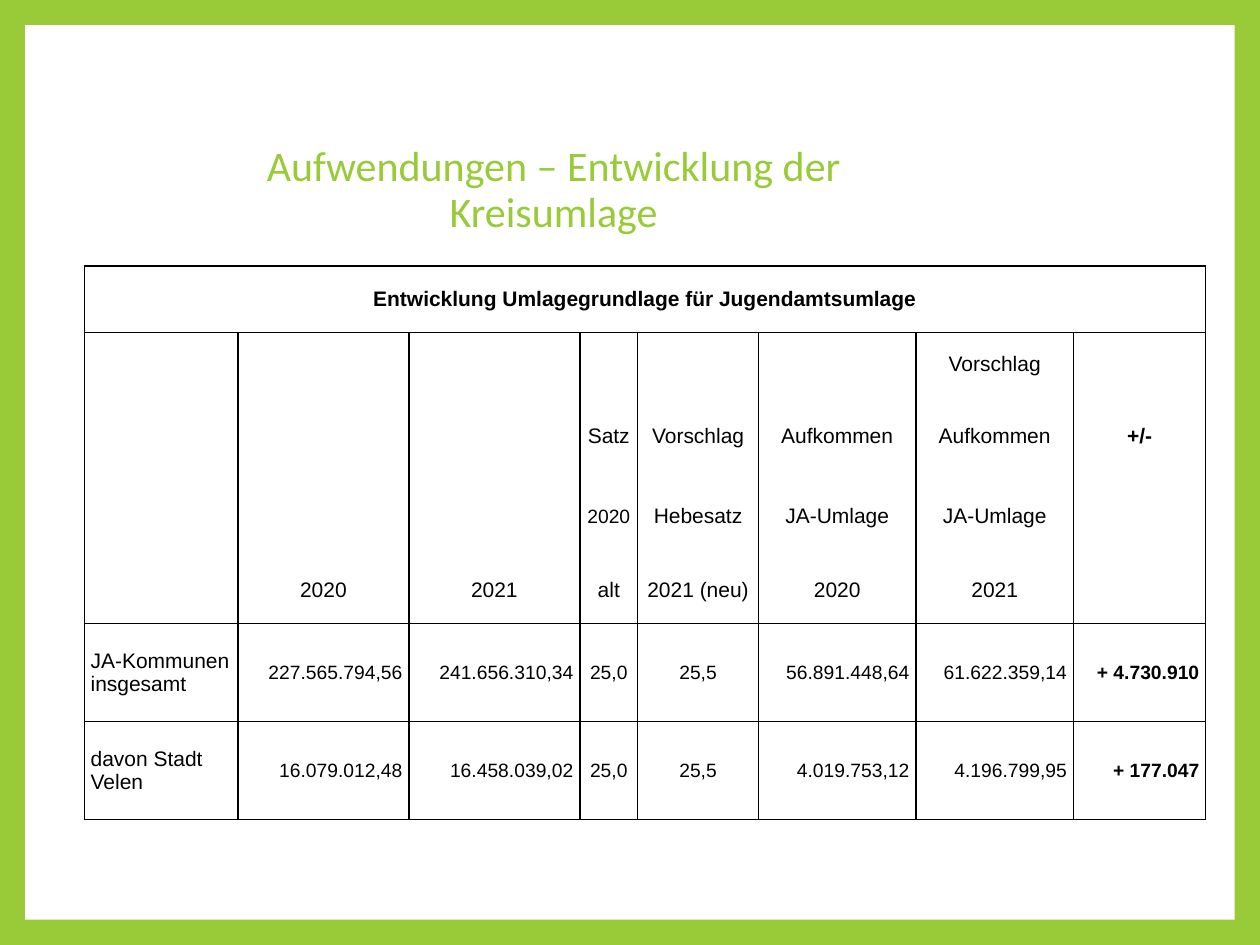
import pptx
import pptx.dml.color
import pptx.enum.shapes
import pptx.enum.text
import pptx.oxml
import pptx.oxml.ns
import pptx.util

Pt = pptx.util.Pt
RGBColor = pptx.dml.color.RGBColor
ALIGN = pptx.enum.text.PP_ALIGN
MIDDLE = pptx.enum.text.MSO_ANCHOR.MIDDLE

GREEN = RGBColor(0x99, 0xCB, 0x38)
WHITE = RGBColor(0xFF, 0xFF, 0xFF)
BLACK = RGBColor(0, 0, 0)

TITLE = "Aufwendungen – Entwicklung der Kreisumlage"
ROWS = [
    ["Entwicklung Umlagegrundlage für Jugendamtsumlage"] + [""] * 7,
    ["", "", "", "", "", "", "Vorschlag", ""],
    ["", "", "", "Satz", "Vorschlag", "Aufkommen", "Aufkommen", "+/-"],
    ["", "", "", "2020", "Hebesatz", "JA-Umlage", "JA-Umlage", ""],
    ["", "2020", "2021", "alt", "2021 (neu)", "2020", "2021", ""],
    ["JA-Kommunen insgesamt", "227.565.794,56", "241.656.310,34", "25,0", "25,5",
     "56.891.448,64", "61.622.359,14", "+ 4.730.910"],
    ["davon Stadt Velen", "16.079.012,48", "16.458.039,02", "25,0", "25,5",
     "4.019.753,12", "4.196.799,95", "+ 177.047"],
]
COLUMN_WIDTHS = [87.8, 97.7, 97.7, 33.1, 69, 90, 90, 75.6]
ROW_HEIGHTS = [38.2, 36, 46, 46, 38.2, 56.1, 56.1]
FIRST_HEADER, LAST_HEADER = 1, 4
LABEL_COLUMN, DIFFERENCE_COLUMN = 0, 7
RATE_COLUMNS = (3, 4)
SMALL_HEADER = (3, 3)


def set_borders(cell, edges):
    """Draw the named edges (of L, R, T, B) in black and hide the others."""
    properties = cell._tc.get_or_add_tcPr()
    for edge in "LRTB":
        paint = (f'<a:solidFill><a:srgbClr val="{BLACK}"/></a:solidFill>'
                 if edge in edges else "<a:noFill/>")
        properties.append(pptx.oxml.parse_xml(
            f'<a:ln{edge} {pptx.oxml.ns.nsdecls("a")} w="{Pt(1)}">{paint}</a:ln{edge}>'))


def alignment(row, column):
    if row <= LAST_HEADER or column in RATE_COLUMNS:
        return ALIGN.CENTER
    return ALIGN.LEFT if column == LABEL_COLUMN else ALIGN.RIGHT


def edges(row):
    top = "T" if row <= FIRST_HEADER or row > LAST_HEADER else ""
    bottom = "B" if row < FIRST_HEADER or row >= LAST_HEADER else ""
    return "LR" + top + bottom


def fill_cell(cell, row, column, text):
    set_borders(cell, edges(row))
    cell.fill.background()
    cell.vertical_anchor = MIDDLE
    cell.margin_left = cell.margin_right = Pt(3.6)
    cell.margin_top = cell.margin_bottom = 0
    cell.text = text
    paragraph = cell.text_frame.paragraphs[0]
    paragraph.alignment = alignment(row, column)
    is_value = row > LAST_HEADER and column != LABEL_COLUMN
    font = paragraph.font
    font.name = "Arial"
    font.size = Pt(11 if is_value or (row, column) == SMALL_HEADER else 12)
    font.bold = row < FIRST_HEADER or column == DIFFERENCE_COLUMN
    font.color.rgb = BLACK


def main():
    deck = pptx.Presentation()
    deck.slide_width, deck.slide_height = Pt(720), Pt(540)
    slide = deck.slides.add_slide(deck.slide_layouts[6])
    slide.background.fill.solid()
    slide.background.fill.fore_color.rgb = GREEN

    page = slide.shapes.add_shape(pptx.enum.shapes.MSO_SHAPE.RECTANGLE,
                                  Pt(14.4), Pt(14.4), Pt(691.2), Pt(511.2))
    page.shadow.inherit = False
    page.fill.solid()
    page.fill.fore_color.rgb = WHITE
    page.line.fill.background()

    title = slide.shapes.add_textbox(Pt(105.1), Pt(66.2), Pt(422.6), Pt(85.7)).text_frame
    title.word_wrap = True
    title.vertical_anchor = MIDDLE
    title.text = TITLE
    heading = title.paragraphs[0]
    heading.alignment = ALIGN.CENTER
    heading.line_spacing = 0.9
    heading.font.name = "Calibri"
    heading.font.size = Pt(24)
    heading.font.color.rgb = GREEN

    table = slide.shapes.add_table(
        len(ROWS), len(COLUMN_WIDTHS), Pt(48.2), Pt(151.9),
        Pt(sum(COLUMN_WIDTHS)), Pt(sum(ROW_HEIGHTS))).table
    table.first_row = table.horz_banding = False
    for column, width in zip(table.columns, COLUMN_WIDTHS):
        column.width = Pt(width)
    for row, height in zip(table.rows, ROW_HEIGHTS):
        row.height = Pt(height)
    for r, texts in enumerate(ROWS):
        for c, text in enumerate(texts):
            fill_cell(table.cell(r, c), r, c, text)
    table.cell(0, 0).merge(table.cell(0, len(COLUMN_WIDTHS) - 1))

    deck.save("out.pptx")


if __name__ == "__main__":
    main()
